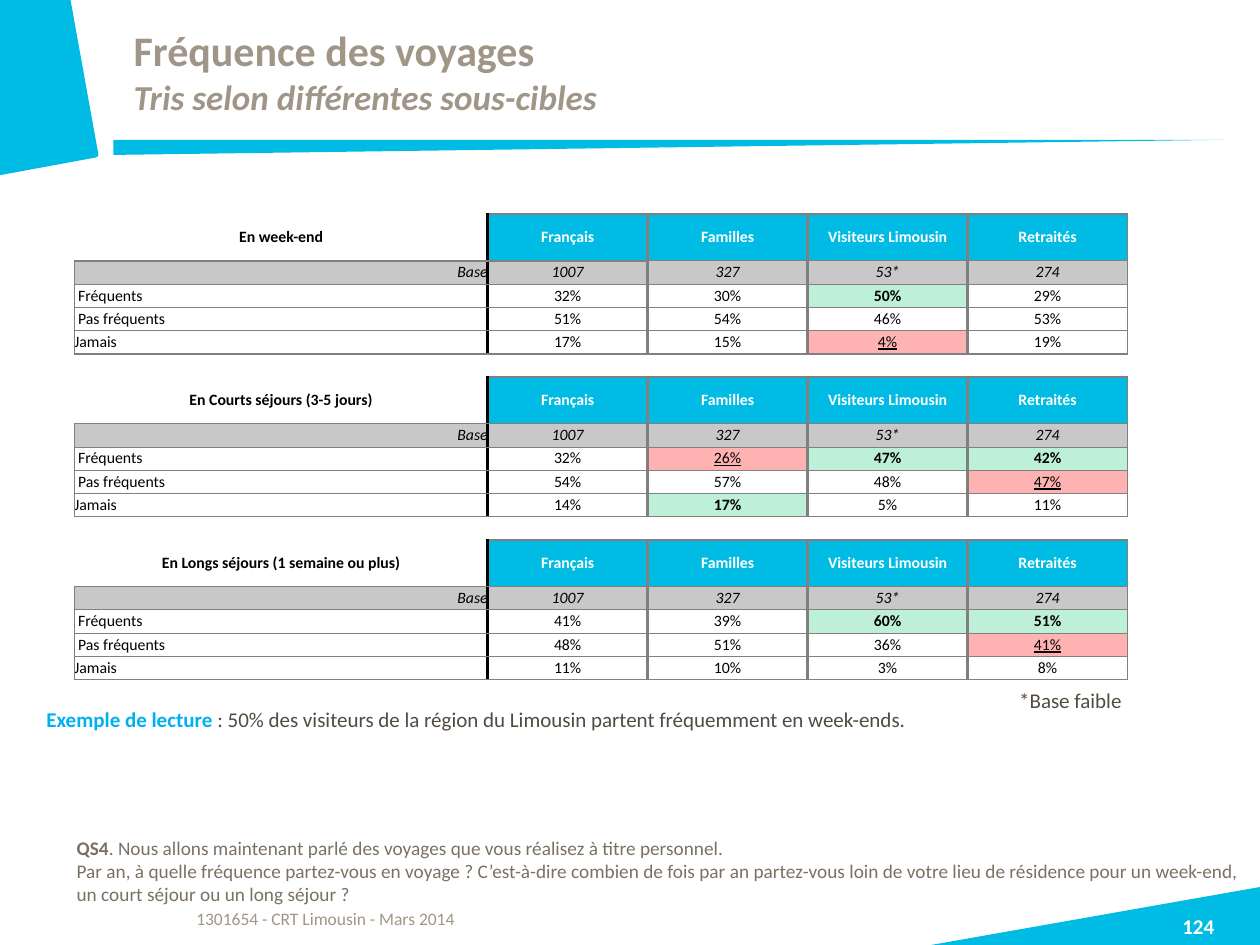
from lxml import etree
from pptx import Presentation
from pptx.dml.color import RGBColor
from pptx.enum.shapes import MSO_SHAPE
from pptx.enum.text import MSO_ANCHOR, PP_ALIGN
from pptx.oxml.ns import qn
from pptx.util import Inches, Pt

LEFT, CENTER, RIGHT = PP_ALIGN.LEFT, PP_ALIGN.CENTER, PP_ALIGN.RIGHT
MIDDLE, TOP = MSO_ANCHOR.MIDDLE, MSO_ANCHOR.TOP
RIGHT_TRIANGLE = MSO_SHAPE.RIGHT_TRIANGLE
CYAN, TAUPE, BROWN, DARK = "00BCE4", "A09687", "7B7162", "524B41"
GREY, LINE, GREEN, RED = "C8C8C8", "808080", "BEF0D7", "FFB2B2"
BLACK, WHITE = "000000", "FFFFFF"


def add_run(p, text, size, color, bold=False, italic=False, underline=False):
    r = p.add_run()
    r.text = text
    r.font.name = "Calibri"
    r.font.size = Pt(size)
    r.font.color.rgb = RGBColor.from_string(color)
    r.font.bold, r.font.italic, r.font.underline = bold, italic, underline


def add_border(cell, side, width, color=LINE):
    """Draw one cell edge (L, R, T or B); a width of 0 hides it."""
    ln = etree.SubElement(cell._tc.get_or_add_tcPr(), qn("a:ln" + side), w=str(Pt(width)))
    if width:
        fill = etree.SubElement(ln, qn("a:solidFill"))
        etree.SubElement(fill, qn("a:srgbClr"), val=color)
    else:
        etree.SubElement(ln, qn("a:noFill"))


prs = Presentation()
prs.slide_width, prs.slide_height = Inches(10), Inches(7.5)
s = prs.slides.add_slide(prs.slide_layouts[5])

# Cyan decoration: two corners and a tapering rule under the title
corners = [
    [(7.39, 7.5), (10, 7.04), (10, 7.5)],
    [(0, 1.39), (0, 0), (0.56, 0), (0.78, 1.22), (0.78, 1.24), (0.76, 1.25)],
]
decoration = []
for points in corners:
    (x, y), *rest = [(Inches(a), Inches(b)) for a, b in points]
    builder = s.shapes.build_freeform(x, y)
    builder.add_line_segments(rest, close=True)
    decoration.append(builder.convert_to_shape())
rule = s.shapes.add_shape(RIGHT_TRIANGLE, Inches(0.9), Inches(1.11), Inches(8.82), Inches(0.12))
rule.element.spPr.xfrm.set("flipV", "1")
for sp in decoration + [rule]:
    sp.shadow.inherit = False
    sp.fill.solid()
    sp.fill.fore_color.rgb = RGBColor.from_string(CYAN)
    sp.line.fill.background()

# Title
title = s.shapes.title
title.left, title.top = Inches(1.06), Inches(0.13)
title.width, title.height = Inches(8.66), Inches(0.87)
tf = title.text_frame
tf.word_wrap = True
tf.vertical_anchor = MIDDLE
tf.margin_left = tf.margin_top = tf.margin_right = tf.margin_bottom = 0
p = tf.paragraphs[0]
p.alignment = LEFT
add_run(p, "Fréquence des voyages", 24, TAUPE, bold=True)
p.add_line_break()
etree.SubElement(p._p[-1], qn("a:rPr"), sz="2400")
add_run(p, "Tris selon différentes sous-cibles", 20, TAUPE, bold=True, italic=True)

# Table: three blocks separated by empty rows; + marks a high value, - a low one
targets = ["Français", "Familles", "Visiteurs Limousin", "Retraités"]
base = ["Base", "1007", "327", "53*", "274"]
labels = ["Fréquents", "Pas fréquents", "Jamais"]
blocks = {
    "En week-end": [
        ["32%", "30%", "50%+", "29%"],
        ["51%", "54%", "46%", "53%"],
        ["17%", "15%", "4%-", "19%"],
    ],
    "En Courts séjours (3-5 jours)": [
        ["32%", "26%-", "47%+", "42%+"],
        ["54%", "57%", "48%", "47%-"],
        ["14%", "17%+", "5%", "11%"],
    ],
    "En Longs séjours (1 semaine ou plus)": [
        ["41%", "39%", "60%+", "51%+"],
        ["48%", "51%", "36%", "41%-"],
        ["11%", "10%", "3%", "8%"],
    ],
}
HEADER, BASE, LAST, GAP = 0, 1, 4, 5
BLOCK_ROWS = 6
rows = []
for name, values in blocks.items():
    rows += [[name] + targets, base]
    rows += [[label] + row for label, row in zip(labels, values)]
    rows.append([""] * 5)
rows.pop()

table = s.shapes.add_table(len(rows), 5, Inches(0.59), Inches(1.7), Inches(8.35), Inches(3.7)).table
table.first_row = table.horz_banding = False
for c, column in enumerate(table.columns):
    column.width = Inches(1.27 if c else 3.28)

for i, texts in enumerate(rows):
    kind = i % BLOCK_ROWS
    table.rows[i].height = Inches(0.37 if kind == HEADER else 0.185)
    for c, text in enumerate(texts):
        cell = table.cell(i, c)
        cell.margin_left = cell.margin_top = cell.margin_right = cell.margin_bottom = 0
        cell.vertical_anchor = MIDDLE
        p = cell.text_frame.paragraphs[0]

        # Edges: thick between columns, thin between rows, none round gaps and block names
        left = 2 if c else 1
        right = 1 if c == 4 else 2
        if kind == GAP:
            left = right = 0
        elif kind == HEADER and c == 0:
            left = 0
        add_border(cell, "L", left, BLACK if c == 1 else LINE)
        add_border(cell, "R", right, BLACK if c == 0 else LINE)
        for side, edge in (("T", kind), ("B", (kind + 1) % BLOCK_ROWS)):
            width = 0.5
            if edge == HEADER:
                width = 1 if c else 0
            elif edge == GAP or (edge == BASE and c < 2):
                width = 1
            add_border(cell, side, width)

        high, low = text.endswith("+"), text.endswith("-")
        color = None
        if kind == HEADER and c:
            color = CYAN
        elif kind == BASE:
            color = GREY
        elif high or low:
            color = GREEN if high else RED
        if color:
            cell.fill.solid()
            cell.fill.fore_color.rgb = RGBColor.from_string(color)
        else:
            cell.fill.background()

        if kind == GAP:
            etree.SubElement(p._p, qn("a:endParaRPr"), sz="900")
            continue
        p.alignment = CENTER
        if c == 0 and kind == BASE:
            p.alignment = RIGHT
        elif c == 0 and kind != HEADER:
            p.alignment = LEFT
            cell.margin_left = Inches(0 if kind == LAST else 0.03)
        add_run(p, text.rstrip("+-"), 9, WHITE if color == CYAN else BLACK,
                bold=kind == HEADER or high, italic=kind == BASE, underline=low)

# Text boxes: place, inset, alignment, paragraphs of (text, size, colour, bold) runs
notes = [
    ((1.46, 7.16, 6.77, 0.34), True, LEFT, [[("1301654 - CRT Limousin - Mars 2014", 10, TAUPE, False)]]),
    ((9.02, 7.25, 0.98, 0.25), False, CENTER, [[("124", 12, WHITE, True)]]),
    ((0.51, 6.59, 9.49, 0.66), True, LEFT, [
        [("QS4", 11, BROWN, True),
         (". Nous allons maintenant parlé des voyages que vous réalisez à titre personnel.", 11, BROWN, False)],
        [("Par an, à quelle fréquence partez-vous en voyage ? C’est-à-dire combien de fois par an "
          "partez-vous loin de votre lieu de résidence pour un week-end, un court séjour ou un long "
          "séjour ?", 11, BROWN, False)],
    ]),
    ((7.99, 5.41, 1.18, 0.3), True, LEFT, [[("*Base faible", 12, DARK, False)]]),
    ((0.27, 5.56, 9.14, 0.3), True, LEFT, [
        [("Exemple de lecture ", 12, "00B0F0", True),
         (": 50% des visiteurs de la région du Limousin partent fréquemment en week-ends.", 12, DARK, False)],
    ]),
]
for place, inset, alignment, paragraphs in notes:
    tf = s.shapes.add_textbox(*map(Inches, place)).text_frame
    tf.word_wrap = True
    tf.vertical_anchor = TOP
    if not inset:
        tf.margin_left = tf.margin_top = tf.margin_right = tf.margin_bottom = 0
    for n, runs in enumerate(paragraphs):
        p = tf.add_paragraph() if n else tf.paragraphs[0]
        p.alignment = alignment
        for run in runs:
            add_run(p, *run)

prs.save("out.pptx")
